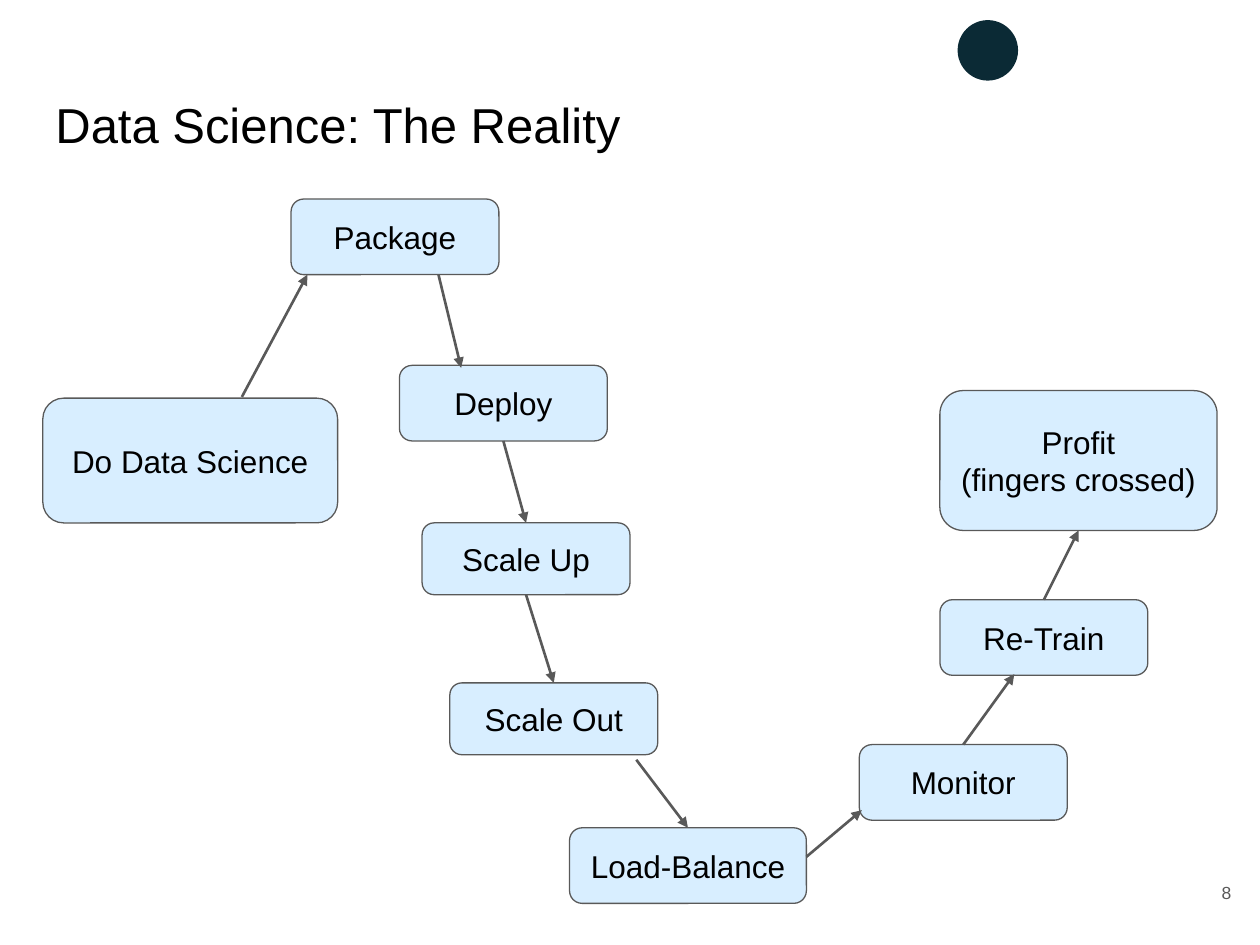
import pptx
import pptx.dml.color
import pptx.enum.shapes
import pptx.enum.text
import pptx.oxml.ns
import pptx.util
from lxml import etree
from pptx.util import Inches

COLORS = {
    "text": "000000",
    "box": "D8EEFF",
    "line": "595959",
    "badge": "0B2A35",
}
TOP, BOTTOM = 0, 2

STEPS = {
    "Do Data Science": (0.34, 3.16, 2.34, 0.99),
    "Package": (2.31, 1.58, 1.65, 0.6),
    "Deploy": (3.17, 2.9, 1.65, 0.6),
    "Scale Up": (3.35, 4.15, 1.65, 0.57),
    "Scale Out": (3.57, 5.42, 1.65, 0.57),
    "Load-Balance": (4.52, 6.57, 1.88, 0.6),
    "Monitor": (6.82, 5.91, 1.65, 0.6),
    "Re-Train": (7.46, 4.76, 1.65, 0.6),
    "Profit\n(fingers crossed)": (7.46, 3.1, 2.2, 1.11),
}

ARROWS = [
    ((1.92, 3.15), (2.44, 2.18), None, None),
    ((3.48, 2.18), (3.66, 2.92), None, None),
    ((4, 3.5), (4.18, 4.15), BOTTOM, TOP),
    ((4.18, 4.72), (4.4, 5.42), BOTTOM, TOP),
    ((5.05, 6.03), (5.46, 6.57), None, TOP),
    ((6.4, 6.8), (6.84, 6.43), None, None),
    ((7.64, 5.91), (8.05, 5.35), TOP, None),
    ((8.29, 4.76), (8.56, 4.21), TOP, BOTTOM),
]


def rgb(name):
    return pptx.dml.color.RGBColor.from_string(COLORS[name])


def write(frame, text, size=18, color="text", align="CENTER", anchor="MIDDLE"):
    frame.word_wrap = True
    frame.auto_size = pptx.enum.text.MSO_AUTO_SIZE.NONE
    frame.vertical_anchor = pptx.enum.text.MSO_ANCHOR[anchor]
    frame.margin_left = frame.margin_right = Inches(0.1)
    frame.margin_top = frame.margin_bottom = Inches(0.1)
    paragraph = frame.paragraphs[0]
    paragraph.text = text
    paragraph.alignment = pptx.enum.text.PP_ALIGN[align]
    for run in paragraph.runs:
        run.font.name = "Arial"
        run.font.size = pptx.util.Pt(size)
        run.font.color.rgb = rgb(color)


def add_title(slide, text):
    title = slide.shapes.title
    title.left, title.top = Inches(0.34), Inches(0.65)
    title.width, title.height = Inches(9.32), Inches(0.83)
    write(title.text_frame, text, size=28, align="LEFT", anchor="TOP")


def add_badge(slide):
    badge = slide.shapes.add_shape(
        pptx.enum.shapes.MSO_SHAPE.OVAL,
        Inches(7.6), Inches(0.16), Inches(0.48), Inches(0.48))
    badge.shadow.inherit = False
    badge.fill.solid()
    badge.fill.fore_color.rgb = rgb("badge")
    badge.line.fill.background()


def add_step(slide, label, box):
    step = slide.shapes.add_shape(
        pptx.enum.shapes.MSO_SHAPE.ROUNDED_RECTANGLE, *map(Inches, box))
    step.shadow.inherit = False
    step.fill.solid()
    step.fill.fore_color.rgb = rgb("box")
    step.line.color.rgb = rgb("line")
    step.line.width = pptx.util.Pt(0.75)
    write(step.text_frame, label)
    return step


def add_arrow(slide, start, end, source, target, source_side, target_side):
    arrow = slide.shapes.add_connector(
        pptx.enum.shapes.MSO_CONNECTOR.STRAIGHT, *map(Inches, start + end))
    if source_side is not None:
        arrow.begin_connect(source, source_side)
    if target_side is not None:
        arrow.end_connect(target, target_side)
    arrow.line.color.rgb = rgb("line")
    arrow.line.width = pptx.util.Pt(1.5)
    qn = pptx.oxml.ns.qn
    properties = arrow.element.spPr
    etree.SubElement(properties.find(qn("a:ln")), qn("a:tailEnd"), type="triangle")
    etree.SubElement(properties, qn("a:effectLst"))


def add_page_number(slide, number):
    page = slide.shapes.add_textbox(
        Inches(9.27), Inches(6.8), Inches(0.6), Inches(0.57))
    write(page.text_frame, number, size=10, color="line", align="RIGHT")


def main():
    deck = pptx.Presentation()
    deck.slide_width, deck.slide_height = Inches(10), Inches(7.5)
    slide = deck.slides.add_slide(deck.slide_layouts[5])
    add_badge(slide)
    add_title(slide, "Data Science: The Reality")
    steps = [add_step(slide, label, box) for label, box in STEPS.items()]
    for source, target, (start, end, *sides) in zip(steps, steps[1:], ARROWS):
        add_arrow(slide, start, end, source, target, *sides)
    add_page_number(slide, "8")
    deck.save("out.pptx")


if __name__ == "__main__":
    main()
